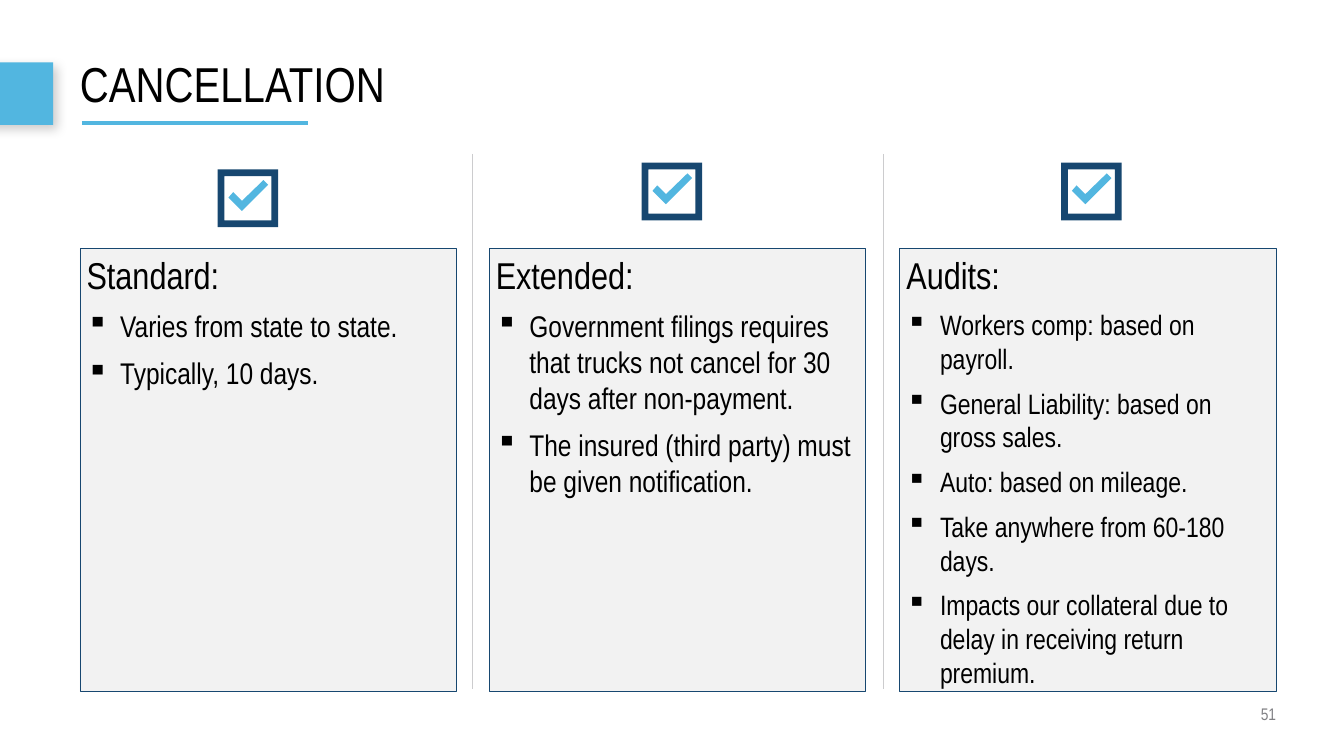
from lxml import etree
from pptx import Presentation
from pptx.dml.color import RGBColor
from pptx.enum.shapes import MSO_CONNECTOR, MSO_SHAPE
from pptx.enum.text import MSO_ANCHOR, MSO_AUTO_SIZE, PP_ALIGN
from pptx.oxml.ns import qn
from pptx.util import Inches, Pt

STRAIGHT = MSO_CONNECTOR.STRAIGHT
RECTANGLE = MSO_SHAPE.RECTANGLE
TOP, MIDDLE = MSO_ANCHOR.TOP, MSO_ANCHOR.MIDDLE
LEFT, RIGHT = PP_ALIGN.LEFT, PP_ALIGN.RIGHT
NO_AUTOFIT = MSO_AUTO_SIZE.NONE

FONT = "Arial Narrow"
SKY, NAVY, PANEL = "52B6E0", "174770", "F2F2F2"
BLACK, GRAY, DIVIDER = "000000", "808084", "CCCCCE"

FRAME_OUTER = [(0, 0), (0, 0.86), (0.9, 0.86), (0.9, 0)]
FRAME_INNER = [(0.8, 0.76), (0.1, 0.76), (0.1, 0.1), (0.8, 0.1)]
TICK = [(0.75, 0.23), (0.68, 0.16), (0.36, 0.47), (0.23, 0.34), (0.16, 0.42), (0.36, 0.62)]

COLUMNS = [
    (1.19, (3.24, 2.52), "Standard:", 32,
     ["Varies from state to state.", "Typically, 10 days."]),
    (7.28, (9.55, 2.42), "Extended:", 32,
     ["Government filings requires that trucks not cancel for 30 days after non-payment.",
      "The insured (third party) must be given notification."]),
    (13.39, (15.79, 2.42), "Audits:", 30,
     ["Workers comp: based on payroll.",
      "General Liability: based on gross sales.",
      "Auto: based on mileage.",
      "Take anywhere from 60-180 days.",
      "Impacts our collateral due to delay in receiving return premium."]),
]


def color(value):
    return RGBColor.from_string(value)


def format_paragraph(paragraph, text, size, font_color=BLACK, alignment=LEFT):
    paragraph.text = text
    paragraph.alignment = alignment
    paragraph.font.name = FONT
    paragraph.font.size = Pt(size)
    paragraph.font.color.rgb = color(font_color)


def set_frame(frame, anchor, inset=None):
    frame.word_wrap = True
    frame.auto_size = NO_AUTOFIT
    frame.vertical_anchor = anchor
    if inset is not None:
        frame.margin_left = frame.margin_right = Inches(inset)
        frame.margin_top = frame.margin_bottom = Inches(inset)


def add_line(slide, start, end, line_color, width):
    points = [Inches(value) for value in start + end]
    connector = slide.shapes.add_connector(STRAIGHT, *points)
    connector.line.color.rgb = color(line_color)
    connector.line.width = Pt(width)
    etree.SubElement(connector._element.spPr, qn("a:effectLst"))


def add_rectangle(slide, box, fill, line_color=None):
    shape = slide.shapes.add_shape(RECTANGLE, *[Inches(value) for value in box])
    shape.shadow.inherit = False
    shape.fill.solid()
    shape.fill.fore_color.rgb = color(fill)
    if line_color:
        shape.line.color.rgb = color(line_color)
        shape.line.width = Pt(0.75)
    else:
        shape.line.fill.background()
    return shape


def add_shadow(shape):
    effects = shape._element.spPr.find(qn("a:effectLst"))
    shadow = etree.SubElement(effects, qn("a:outerShdw"), blurRad=str(Pt(12)),
                              dist=str(Pt(7)), dir="2700000", algn="tl", rotWithShape="0")
    shade = etree.SubElement(shadow, qn("a:srgbClr"), val=BLACK)
    etree.SubElement(shade, qn("a:alpha"), val="20000")


def add_outline(slide, origin, contours, fill):
    placed = [[(Inches(origin[0] + x), Inches(origin[1] + y)) for x, y in contour]
              for contour in contours]
    builder = slide.shapes.build_freeform(*placed[0][0])
    builder.add_line_segments(placed[0][1:], close=True)
    for contour in placed[1:]:
        builder.move_to(*contour[0])
        builder.add_line_segments(contour[1:], close=True)
    shape = builder.convert_to_shape()
    shape.shadow.inherit = False
    shape.fill.solid()
    shape.fill.fore_color.rgb = color(fill)
    shape.line.fill.background()


def add_checkbox(slide, origin):
    add_outline(slide, origin, [FRAME_OUTER, FRAME_INNER], NAVY)
    add_outline(slide, origin, [TICK], SKY)


def add_bullet(paragraph):
    properties = paragraph._p.get_or_add_pPr()
    properties.set("marL", str(Inches(0.5)))
    properties.set("indent", str(Inches(-0.5)))
    bullet = etree.Element(qn("a:buChar"), char="▪")
    properties.insert_element_before(bullet, "a:tabLst", "a:defRPr", "a:extLst")


def add_panel(slide, left, heading, size, items):
    panel = add_rectangle(slide, (left, 3.7, 5.6, 6.59), PANEL, NAVY)
    frame = panel.text_frame
    set_frame(frame, TOP)
    format_paragraph(frame.paragraphs[0], heading, 40)
    for item in items:
        paragraph = frame.add_paragraph()
        format_paragraph(paragraph, item, size)
        add_bullet(paragraph)
    for paragraph in frame.paragraphs:
        paragraph.space_after = Pt(12)


def set_title(slide, text):
    title = slide.shapes.title
    title.left, title.top = Inches(1.19), Inches(0.59)
    title.width, title.height = Inches(17.8), Inches(1.41)
    set_frame(title.text_frame, MIDDLE, 0)
    paragraph = title.text_frame.paragraphs[0]
    format_paragraph(paragraph, text, 52.5)
    paragraph.line_spacing = 0.9


def add_page_number(slide, text):
    box = slide.shapes.add_textbox(Inches(14.49), Inches(10.43), Inches(4.5), Inches(0.38))
    set_frame(box.text_frame, MIDDLE, 0)
    format_paragraph(box.text_frame.paragraphs[0], text, 18, GRAY, RIGHT)


def main():
    presentation = Presentation()
    presentation.slide_width = Inches(20)
    presentation.slide_height = Inches(11.25)
    slide = presentation.slides.add_slide(presentation.slide_layouts[5])

    set_title(slide, "CANCELLATION")
    add_line(slide, (1.22, 1.83), (4.59, 1.83), SKY, 5)
    add_shadow(add_rectangle(slide, (-0.51, 0.93, 1.3, 0.93), SKY))
    for x in (7.03, 13.15):
        add_line(slide, (x, 2.29), (x, 10.26), DIVIDER, 1)
    for left, checkbox, heading, size, items in COLUMNS:
        add_panel(slide, left, heading, size, items)
        add_checkbox(slide, checkbox)
    add_page_number(slide, "51")

    presentation.save("out.pptx")


if __name__ == "__main__":
    main()
